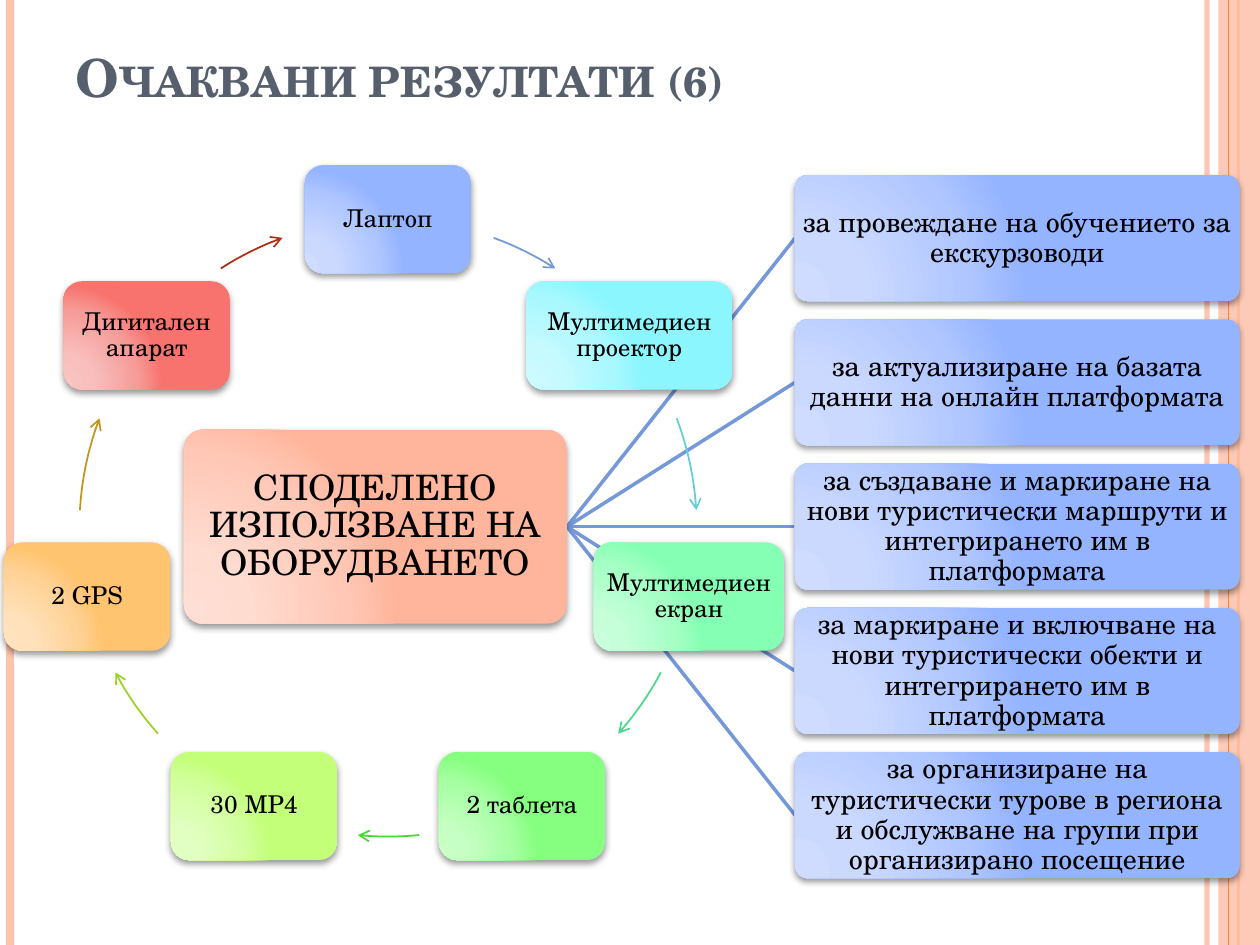
from math import cos, radians, sin

from lxml import etree
from pptx import Presentation
from pptx.dml.color import RGBColor
from pptx.enum import shapes, text
from pptx.oxml import ns, parse_xml
from pptx.util import Pt

theme = {
    "font": "TeX Gyre Schola",
    "ink": "000000",
    "title": "575F6D",
    "rail": "FEC3AE",
    "edge": "FE8637",
    "link": "7598D9",
    "peach": "FFDED5 FFDBD0 FFC8B6 FFB59B",
    "blue": "CFDCFF CBD9FF AFC6FF 95B4FF",
    "cyan": "CCFAFF C7FAFF A9F8FF 8CF6FF",
    "mint": "C9FFDC C4FFD9 A5FFC5 85FFB3",
    "green": "CAFFC8 C5FFC3 A6FFA2 86FF80",
    "lime": "E3FFC5 E1FFC0 D2FF9E C4FF7A",
    "amber": "FFE3C1 FFE1BB FFD296 FFC470",
    "red": "F8C5C3 F8BFBD F69B98 F8736E",
    "big": 30, "hub": 20, "goal": 16, "node": 14,
}

deck = Presentation()
deck.slide_width, deck.slide_height = Pt(720), Pt(540)
col = deck.slide_width // 10
slide = deck.slides.add_slide(deck.slide_layouts[6])
parts = slide.shapes


def write(frame, words, size, color=theme["ink"], bold=False, small=False,
          align=text.PP_ALIGN.CENTER, anchor=text.MSO_ANCHOR.MIDDLE, pad=None, gap=0.9):
    frame.word_wrap = True
    frame.vertical_anchor = anchor
    if pad is not None:
        frame.margin_left = frame.margin_right = int(pad * col)
        frame.margin_top = frame.margin_bottom = int(pad * col)
    para = frame.paragraphs[0]
    para.alignment = align
    para.line_spacing = gap
    run = para.add_run()
    run.text = words
    run.font.name = theme["font"]
    run.font.size = Pt(size)
    run.font.bold = bold
    run.font.color.rgb = RGBColor.from_string(color)
    if small:
        run.font._element.set("cap", "small")


def card(words, left, top, wide, high, tone, size, pad, adj):
    item = parts.add_shape(shapes.MSO_SHAPE.ROUNDED_RECTANGLE,
                           *(int(v * col) for v in (left, top, wide, high)))
    item.adjustments[0] = adj
    item.line.fill.background()
    item.fill.background()
    stops = "".join(f'<a:gs pos="{at}000"><a:srgbClr val="{c}"/></a:gs>'
                    for at, c in zip((0, 30, 75, 100), theme[tone].split()))
    grad = parse_xml(f'<a:gradFill {ns.nsdecls("a")} rotWithShape="1"><a:gsLst>{stops}</a:gsLst>'
                     '<a:path path="circle"><a:fillToRect l="5000" t="100000" r="120000" b="10000"/>'
                     '</a:path></a:gradFill>')
    props = item.element.spPr
    props.replace(props.find(ns.qn("a:noFill")), grad)
    item.shadow.inherit = False
    props.find(ns.qn("a:effectLst")).append(parse_xml(
        f'<a:outerShdw {ns.nsdecls("a")} blurRad="50800" dist="25400" dir="5400000" rotWithShape="0">'
        '<a:srgbClr val="000000"><a:alpha val="40000"/></a:srgbClr></a:outerShdw>'))
    write(item.text_frame, words, size, pad=pad)


goals = [
    "за провеждане на обучението за екскурзоводи",
    "за актуализиране на базата данни на онлайн платформата",
    "за създаване и маркиране на нови туристически маршрути и интегрирането им в платформата",
    "за маркиране и включване на нови туристически обекти и интегрирането им в платформата",
    "за организиране на туристически турове в региона и обслужване на групи при организирано посещение",
]
tops = [1.39 + 1.145 * i for i in range(len(goals))]

lines = [(x, 0, x, 7.5, theme[tone], wide) for x, tone, wide in (
    (9.58, "rail", 3), (0.08, "rail", 4.5), (9.83, "edge", 1.5), (9.75, "edge", 0.75))]
lines += [(4.5, 4.18, 6.31, top + 0.5, theme["link"], 2) for top in tops]
drawn = []
for *ends, tone, wide in lines:
    line = parts.add_connector(shapes.MSO_CONNECTOR.STRAIGHT, *(int(v * col) for v in ends))
    line.line.width = Pt(wide)
    line.line.color.rgb = RGBColor.from_string(tone)
    etree.SubElement(line.element.spPr, ns.qn("a:effectLst"))
    drawn.append(line)

band = parts.add_shape(shapes.MSO_SHAPE.RECTANGLE, int(9.67 * col), 0,
                       int(0.33 * col), deck.slide_height)
band.shadow.inherit = False
band.line.fill.background()
band.fill.solid()
band.fill.fore_color.rgb = RGBColor.from_string(theme["rail"])
drawn[3].element.addprevious(band.element)
for item, share in ((drawn[0], 93), (band, 87)):
    tint = next(item.element.spPr.iter(ns.qn("a:srgbClr")))
    etree.SubElement(tint, ns.qn("a:alpha")).set("val", f"{share}000")

head = parts.add_textbox(*(int(v * col) for v in (0.5, 0.3, 8.17, 0.61)))
write(head.text_frame, "Очаквани резултати (6)", theme["big"], color=theme["title"], bold=True,
      small=True, align=text.PP_ALIGN.LEFT, anchor=text.MSO_ANCHOR.BOTTOM, gap=1)

card("СПОДЕЛЕНО ИЗПОЛЗВАНЕ НА ОБОРУДВАНЕТО", 1.46, 3.41, 3.04, 1.54,
     "peach", theme["hub"], 0.01, 0.1)
for words, top in zip(goals, tops):
    card(words, 6.31, top, 3.53, 1, "blue", theme["goal"], 0.01, 0.1)

nodes = [
    ("Лаптоп", 1.32, "blue", "7598D9", 20, 32.8),
    ("Мултимедиен проектор", 1.64, "cyan", "60D0D8", 69.2, 86.7),
    ("Мултимедиен екран", 1.51, "mint", "4AD78E", 117.9, 131.8),
    ("2 таблета", 1.32, "green", "45D834", 174.2, 185.6),
    ("30 МР4", 1.32, "lime", "9CD224", 228.2, 242.1),
    ("2 GPS", 1.32, "amber", "C3951C", 273.3, 290.8),
    ("Дигитален апарат", 1.32, "red", "B32C16", 327.2, 340),
]
midx, midy, ray, high, steps = 3.08, 4.19, 2.45, 0.86, 8
for i, (words, wide, tone, ink, start, stop) in enumerate(nodes):
    turn = radians(360 / len(nodes) * i)
    card(words, midx + ray * sin(turn) - wide / 2, midy - ray * cos(turn) - high / 2,
         wide, high, tone, theme["node"], 0.06, 0.17)
    turns = [radians(start + (stop - start) * n / steps) for n in range(steps + 1)]
    dots = [(int((midx + ray * sin(t)) * col), int((midy - ray * cos(t)) * col)) for t in turns]
    path = parts.build_freeform(*dots[0])
    path.add_line_segments(dots[1:], close=False)
    arc = path.convert_to_shape()
    arc.shadow.inherit = False
    arc.fill.background()
    arc.line.width = Pt(1)
    arc.line.color.rgb = RGBColor.from_string(ink)
    etree.SubElement(arc.element.spPr.find(ns.qn("a:ln")), ns.qn("a:tailEnd")).set("type", "arrow")

deck.save("out.pptx")
